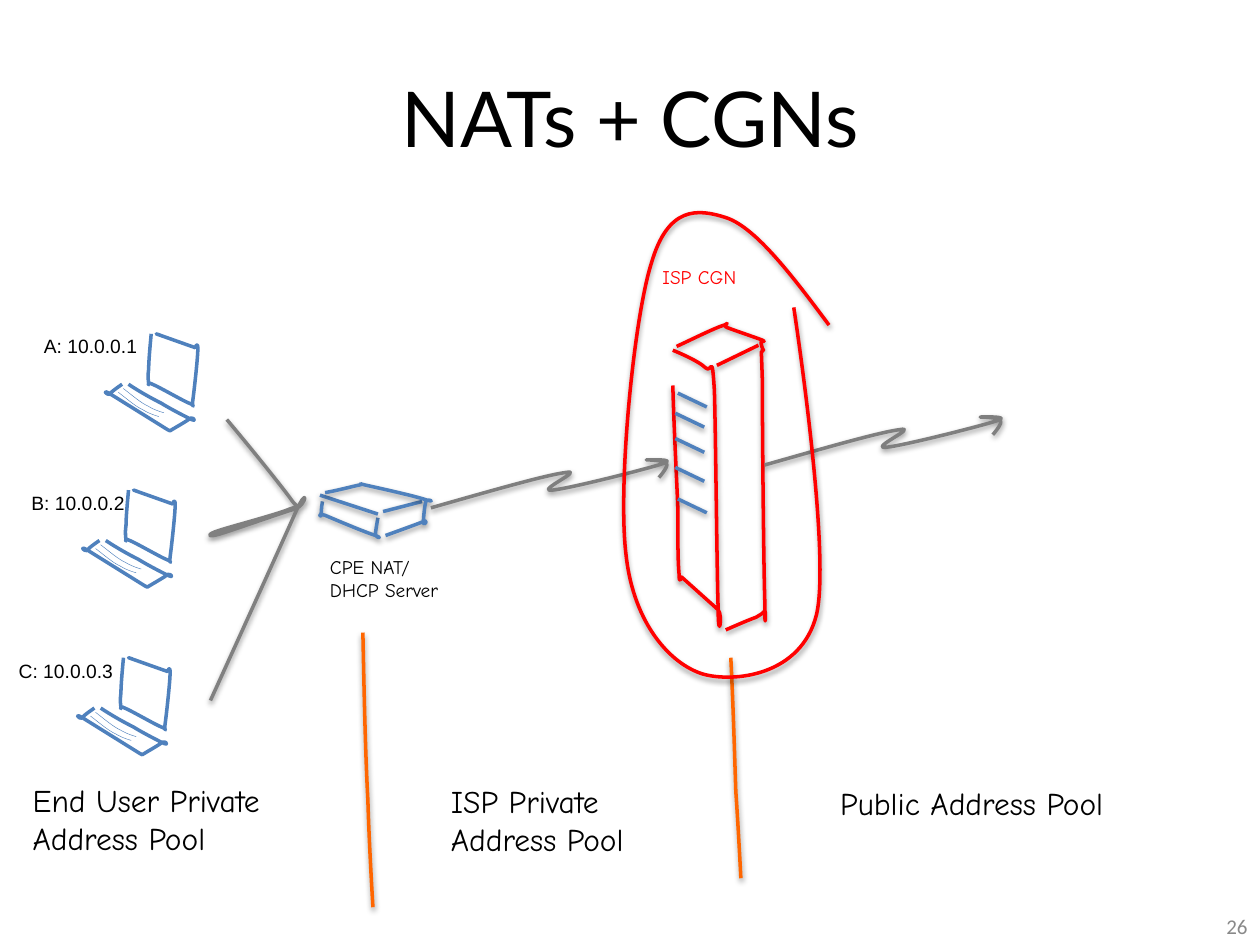
from pptx import Presentation
from pptx.dml.color import RGBColor
from pptx.enum.text import MSO_ANCHOR as Anchor, MSO_AUTO_SIZE as Fit, PP_ALIGN as Align
from pptx.oxml import parse_xml
from pptx.util import Inches, Pt

BLACK = RGBColor(0x00, 0x00, 0x00)
BLUE = RGBColor(0x4F, 0x81, 0xBD)
GRAY = RGBColor(0x80, 0x80, 0x80)
LINK = RGBColor(0x7F, 0x7F, 0x7F)
RED = RGBColor(0xFF, 0x00, 0x00)
ORANGE = RGBColor(0xFF, 0x66, 0x00)
PALE = RGBColor(0x89, 0x89, 0x89)
HAND = "Comic Neue"
SHADOW = (
    '<a:outerShdw xmlns:a="http://schemas.openxmlformats.org/drawingml/2006/main"'
    ' blurRad="40000" dist="20000" dir="5400000" rotWithShape="0">'
    '<a:srgbClr val="000000"><a:alpha val="38000"/></a:srgbClr></a:outerShdw>'
)

deck = Presentation()
deck.slide_width, deck.slide_height = Inches(10), Inches(7.5)
slide = deck.slides.add_slide(deck.slide_layouts[6])
shapes = slide.shapes


def draw(rows, color, width=2, shift=(0, 0), shade=True):
    """Pen stroke: a row of 2 numbers is a point, a row of 6 a Bezier curve."""
    pts = [(Inches(row[i] + shift[0]), Inches(row[i + 1] + shift[1]))
           for row in rows for i in range(0, len(row), 2)]
    pen = shapes.build_freeform(*pts[0])
    pen.add_line_segments(pts[1:], close=False)
    stroke = pen.convert_to_shape()
    # Join the three steps of each curve into one Bezier segment
    steps = iter(list(stroke.element.iter("{*}lnTo")))
    for row in rows[1:]:
        step = next(steps)
        if len(row) == 6:
            for extra in (next(steps), next(steps)):
                step.append(extra[0])
                extra.getparent().remove(extra)
            step.tag = step.tag.replace("lnTo", "cubicBezTo")
    stroke.fill.background()
    stroke.line.color.rgb = color
    stroke.line.width = Pt(width)
    stroke.shadow.inherit = False
    if shade:
        stroke.element.spPr.find("{*}effectLst").append(parse_xml(SHADOW))
    return stroke


def write(text, box, size, font, color=BLACK, align=Align.LEFT, anchor=Anchor.TOP, wrap=True):
    frame = shapes.add_textbox(*map(Inches, box)).text_frame
    frame.text = text
    frame.word_wrap = wrap
    frame.vertical_anchor = anchor
    frame.auto_size = Fit.NONE if wrap else Fit.SHAPE_TO_FIT_TEXT
    for para in frame.paragraphs:
        para.alignment = align
        para.font.size = Pt(size)
        para.font.name = font
        para.font.color.rgb = color


# Title and page number
write("NATs + CGNs", (0.29, 0.3, 9.42, 1.25), 44, "Lato", align=Align.CENTER, anchor=Anchor.MIDDLE)
write("26", (7.67, 7.15, 2.33, 0.4), 12, "Calibri", PALE, Align.RIGHT, Anchor.MIDDLE)

# Laptops with their private addresses
SCREEN = [(1.2, 2.65), (1.19, 2.76, 1.18, 2.87, 1.18, 2.93), (1.17, 3, 1.18, 3.03, 1.18, 3.05),
          (1.19, 3.07, 1.15, 3.02, 1.21, 3.05), (1.26, 3.07, 1.45, 3.18, 1.5, 3.2),
          (1.56, 3.22, 1.52, 3.25, 1.53, 3.18), (1.54, 3.11, 1.57, 2.84, 1.57, 2.77),
          (1.57, 2.7, 1.55, 2.76, 1.55, 2.76), (1.24, 2.65), (1.27, 2.66)]
BASE = [(1.02, 3.05), (1.11, 3.11, 1.2, 3.16, 1.28, 3.2), (1.36, 3.25, 1.48, 3.31, 1.52, 3.33),
        (1.56, 3.35, 1.54, 3.31, 1.51, 3.32), (1.49, 3.34, 1.38, 3.4, 1.35, 3.42), (1.33, 3.41),
        (0.88, 3.13), (0.8, 3.08, 0.85, 3.14, 0.87, 3.13), (0.88, 3.11, 0.97, 3.05, 0.97, 3.05)]
KEYS = [(0.93, 3.13), (1.01, 3.18, 1.08, 3.23, 1.14, 3.25), (1.2, 3.28, 1.27, 3.29, 1.27, 3.29)]
for name, shift, box in (
    ("A: 10.0.0.1", (0, 0), (0.25, 2.6, 0.96, 0.29)),
    ("B: 10.0.0.2", (-0.18, 1.24), (0.15, 3.85, 0.95, 0.29)),
    ("C: 10.0.0.3", (-0.22, 2.57), (0.05, 5.18, 0.96, 0.29)),
):
    parts = [draw(rows, BLUE, shift=shift, shade=False) for rows in (SCREEN, BASE)]
    for dx, dy in ((0, 0), (0.04, -0.03)):
        keys = draw(KEYS, BLUE, 0.25, (shift[0] + dx, shift[1] + dy), False)
        keys.rotation = 5.7
        parts.append(keys)
    shapes.add_group_shape(parts)
    write(name, box, 11, "Arial", wrap=False)

# Home router
ROUTER = (
    [(2.56, 3.98), (2.55, 4.03, 2.55, 4.08, 2.55, 4.09), (2.55, 4.11, 2.51, 4.07, 2.58, 4.09),
     (2.65, 4.12, 2.91, 4.23, 2.98, 4.25), (3.05, 4.28, 2.98, 4.27, 2.98, 4.24),
     (2.98, 4.22, 3, 4.11, 3, 4.11)],
    [(2.54, 3.93), (3, 4.08)],
    [(3.04, 4.06), (3.35, 3.98)],
    [(2.58, 3.91), (2.69, 3.89, 2.8, 3.86, 2.85, 3.85), (2.91, 3.84, 2.81, 3.83, 2.9, 3.85),
     (2.99, 3.87, 3.31, 3.94, 3.39, 3.97), (3.47, 3.99, 3.38, 3.95, 3.38, 3.98),
     (3.37, 4.01, 3.36, 4.12, 3.36, 4.15), (3.36, 4.18, 3.41, 4.12, 3.36, 4.14),
     (3.31, 4.16, 3.06, 4.25, 3.06, 4.25)],
)
shapes.add_group_shape([draw(rows, BLUE) for rows in ROUTER])
write("CPE NAT/\nDHCP Server", (2.52, 4.36, 1.31, 0.66), 11, HAND)

# Wires from the laptops to the router
draw([(1.8, 3.33), (2.01, 3.58, 2.21, 3.83, 2.3, 3.95), (2.38, 4.07, 2.4, 4, 2.3, 4.04),
      (2.21, 4.08, 1.83, 4.18, 1.74, 4.21), (1.64, 4.24, 1.64, 4.27, 1.74, 4.24),
      (1.84, 4.21, 2.24, 4.07, 2.34, 4.04), (2.44, 4.01, 2.45, 3.83, 2.34, 4.08),
      (2.23, 4.33, 1.67, 5.56, 1.67, 5.56)], GRAY)

# CGN tower: front, side, top edge and vents
draw([(5.34, 3.06), (5.35, 3.42, 5.37, 3.78, 5.38, 4.03), (5.38, 4.28, 5.38, 4.46, 5.39, 4.56),
      (5.39, 4.65, 5.41, 4.58, 5.41, 4.58), (5.7, 4.84), (5.74, 4.88, 5.7, 5.12, 5.7, 4.83),
      (5.69, 4.54, 5.68, 3.42, 5.67, 3.1), (5.65, 2.78, 5.65, 2.97, 5.6, 2.92),
      (5.54, 2.86, 5.34, 2.78, 5.34, 2.78)], RED)
draw([(5.37, 2.75), (5.52, 2.68, 5.68, 2.6, 5.75, 2.58), (5.81, 2.55, 5.72, 2.58, 5.77, 2.6),
      (5.82, 2.62, 6, 2.68, 6.05, 2.7), (6.09, 2.72, 6.03, 2.7, 6.04, 2.72),
      (6.04, 2.73, 6.05, 2.77, 6.06, 2.78), (6.06, 2.79, 6.05, 2.75, 6.05, 2.79),
      (6.04, 2.83, 6.04, 2.68, 6.05, 3.01), (6.05, 3.34, 6.06, 4.47, 6.07, 4.78),
      (6.07, 5.08, 6.08, 4.83, 6.07, 4.85), (6.05, 4.87, 6.05, 4.87, 6, 4.9),
      (5.94, 4.92, 5.76, 5, 5.76, 5)], RED)
draw([(5.69, 2.9), (6.02, 2.74)], RED)
for x, y in ((5.38, 3.12), (5.36, 3.28), (5.36, 3.48), (5.36, 3.71), (5.38, 3.96)):
    draw([(x, y), (x + 0.23, y + 0.11)], BLUE)
write("ISP CGN", (5.16, 2.06, 1.04, 0.29), 11, HAND, RED)

# Zigzag links into and out of the tower
ZIGZAG = [(3.42, 4.03), (3.88, 3.9, 4.33, 3.77, 4.49, 3.75), (4.65, 3.72, 4.25, 3.9, 4.38, 3.89),
          (4.51, 3.88, 5.14, 3.72, 5.26, 3.68), (5.39, 3.64, 5.13, 3.65, 5.13, 3.65),
          (5.14, 3.65, 5.27, 3.65, 5.29, 3.68), (5.31, 3.7, 5.23, 3.79, 5.23, 3.79)]
for shift in ((0, 0), (2.65, -0.34)):
    draw(ZIGZAG, LINK, shift=shift)

# Address pools and the borders between them
write("Public Address Pool", (6.57, 6.17, 2.74, 0.4), 18, HAND)
write("ISP Private Address Pool", (3.48, 6.16, 2.11, 0.71), 18, HAND)
write("End User Private Address Pool", (0.16, 6.15, 2.91, 0.71), 18, HAND)
draw([(2.88, 5.02), (2.89, 5.5, 2.9, 5.98, 2.92, 6.35), (2.93, 6.71, 2.96, 7.2, 2.96, 7.2)], ORANGE)
draw([(5.8, 5.22), (5.82, 5.61, 5.83, 5.99, 5.84, 6.28), (5.86, 6.57, 5.88, 6.97, 5.88, 6.97)], ORANGE)

# Ring around the CGN
draw([(6.58, 2.58), (6.29, 2.19, 6, 1.81, 5.77, 1.73), (5.53, 1.65, 5.3, 1.64, 5.17, 2.09),
      (5.03, 2.53, 4.9, 3.86, 4.97, 4.41), (5.03, 4.95, 5.32, 5.27, 5.58, 5.35),
      (5.83, 5.42, 6.36, 5.36, 6.48, 4.88), (6.6, 4.39, 6.3, 2.44, 6.3, 2.44)], RED)

deck.save("out.pptx")
